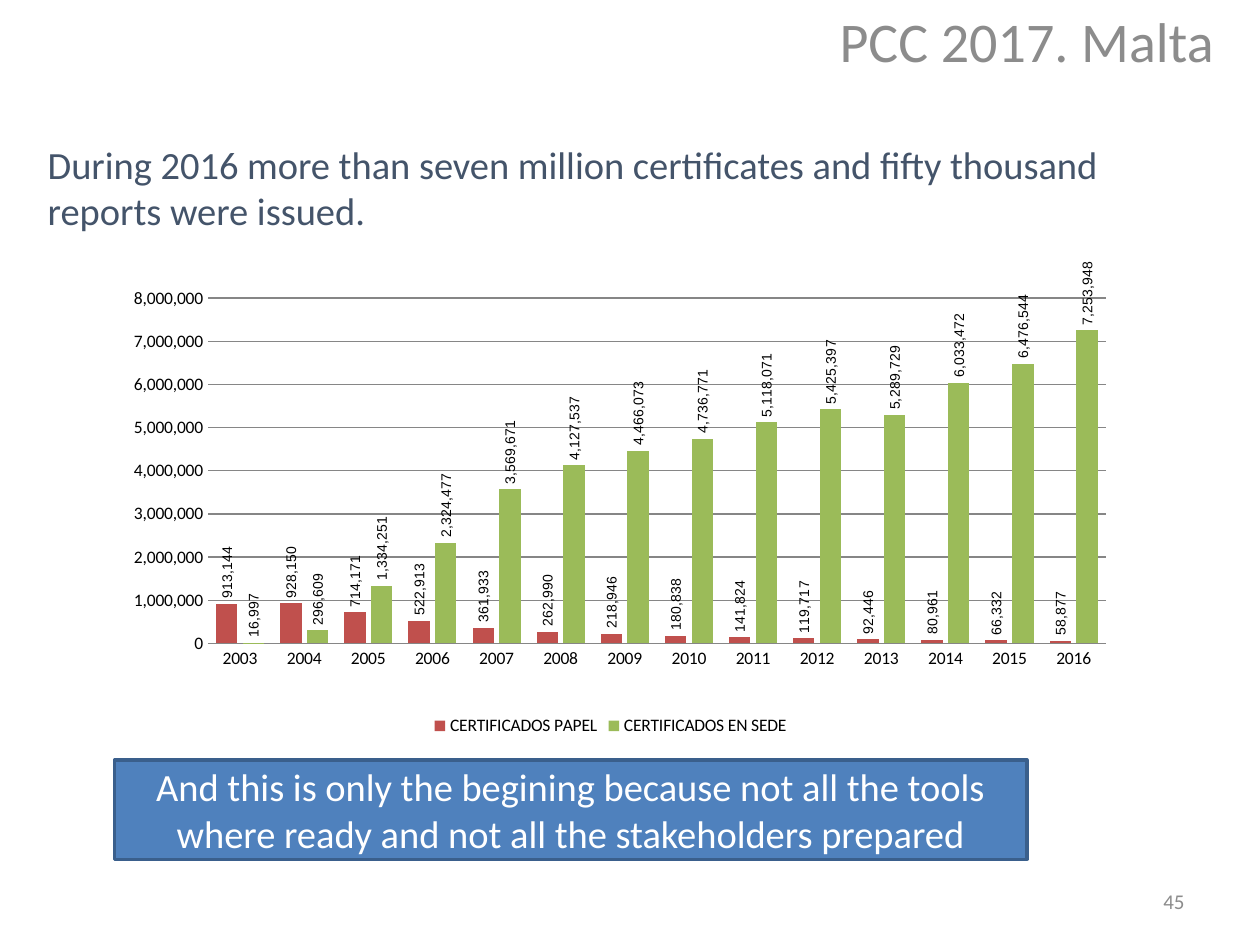
from lxml import etree
from pptx import Presentation
from pptx.chart.data import CategoryChartData
from pptx.dml.color import RGBColor
from pptx.enum.chart import XL_CHART_TYPE as ChartType, XL_LABEL_POSITION as LabelPosition
from pptx.enum.chart import XL_LEGEND_POSITION as LegendPosition, XL_TICK_MARK as TickMark
from pptx.enum.shapes import MSO_SHAPE as Preset
from pptx.enum.text import MSO_ANCHOR as Anchor, PP_ALIGN as Align
from pptx.oxml.ns import qn
from pptx.util import Pt

THEME = {
    "font": "Calibri", "label_font": "Arial",
    "title_size": 32, "body_size": 22, "number_size": 12, "axis_size": 10, "label_size": 8,
    "gray": "8C8C8C", "slate": "44546A", "white": "FFFFFF", "black": "000000",
    "blue": "4F81BD", "border": "3A5F8C", "grid": "868686",
    "red": "C0504D", "green": "9BBB59",
}


def set_font(font, size, color, name="font"):
    values = {"name": THEME[name], "size": Pt(THEME[size]), "bold": False}
    for key, value in values.items():
        setattr(font, key, value)
    font.color.rgb = RGBColor.from_string(THEME[color])


def place_text(shape, box, text, size, color, align, anchor):
    for key, value in zip(("left", "top", "width", "height"), box):
        setattr(shape, key, Pt(value))
    frame = shape.text_frame
    frame.text = text
    frame.word_wrap = True
    frame.vertical_anchor = anchor
    paragraph = frame.paragraphs[0]
    paragraph.alignment = align
    set_font(paragraph.runs[0].font, size, color)


presentation = Presentation()
presentation.slide_width, presentation.slide_height = Pt(720), Pt(540)
slide = presentation.slides.add_slide(presentation.slide_layouts[5])
shapes = slide.shapes

place_text(shapes.title, (377.3, 0, 419, 82.8), "PCC 2017. Malta",
           "title_size", "gray", Align.CENTER, Anchor.TOP)

chart_data = CategoryChartData(number_format="#,##0")
chart_data.categories = [str(year) for year in range(2003, 2017)]
chart_data.add_series("CERTIFICADOS PAPEL", (
    913144, 928150, 714171, 522913, 361933, 262990, 218946,
    180838, 141824, 119717, 92446, 80961, 66332, 58877))
chart_data.add_series("CERTIFICADOS EN SEDE", (
    16997, 296609, 1334251, 2324477, 3569671, 4127537, 4466073,
    4736771, 5118071, 5425397, 5289729, 6033472, 6476544, 7253948))
chart = shapes.add_chart(ChartType.COLUMN_CLUSTERED, Pt(54), Pt(145.4),
                         Pt(589.7), Pt(277.9), chart_data).chart
set_font(chart.font, "axis_size", "black")
chart.has_title = False
chart.has_legend = True
chart.legend.position = LegendPosition.BOTTOM
chart.legend.include_in_layout = False

for axis in (chart.category_axis, chart.value_axis):
    axis.major_tick_mark = axis.minor_tick_mark = TickMark.NONE
chart.category_axis.format.line.color.rgb = RGBColor.from_string(THEME["grid"])
value_axis = chart.value_axis
value_axis.minimum_scale, value_axis.maximum_scale, value_axis.major_unit = 0, 8000000, 1000000
value_axis.format.line.fill.background()
value_axis.tick_labels.number_format = "#,##0"
value_axis.tick_labels.number_format_is_linked = False
grid_line = value_axis.major_gridlines.format.line
grid_line.color.rgb = RGBColor.from_string(THEME["grid"])
grid_line.width = Pt(0.75)

plot = chart.plots[0]
plot.gap_width, plot.overlap, plot.vary_by_categories = 75, -25, False
for series, color in zip(plot.series, ("red", "green")):
    series.format.fill.solid()
    series.format.fill.fore_color.rgb = RGBColor.from_string(THEME[color])
    labels = series.data_labels
    label_format = {"show_value": True, "number_format": "#,##0",
                    "number_format_is_linked": False, "position": LabelPosition.OUTSIDE_END}
    for key, value in label_format.items():
        setattr(labels, key, value)
    set_font(labels.font, "label_size", "black", "label_font")
    body = labels._element.find(qn("c:txPr")).find(qn("a:bodyPr"))
    body.set("rot", "-5400000")
    body.set("vert", "horz")

plot_area = chart._chartSpace.chart.plotArea
for old_layout in plot_area.findall(qn("c:layout")):
    plot_area.remove(old_layout)
layout = etree.Element(qn("c:layout"))
plot_area.insert(0, layout)
manual = etree.SubElement(layout, qn("c:manualLayout"))
for tag, value in (("layoutTarget", "inner"), ("xMode", "edge"), ("yMode", "edge"),
                   ("x", 0.11), ("y", 0.09), ("w", 0.87), ("h", 0.71)):
    etree.SubElement(manual, qn(f"c:{tag}")).set("val", str(value))

place_text(shapes.add_textbox(0, 0, 0, 0), (20.2, 77, 657.4, 82),
           "During 2016 more than seven million certificates and fifty thousand reports were issued.",
           "body_size", "slate", Align.LEFT, Anchor.TOP)

banner = shapes.add_shape(Preset.RECTANGLE, 0, 0, 0, 0)
banner.shadow.inherit = False
banner.fill.solid()
banner.fill.fore_color.rgb = RGBColor.from_string(THEME["blue"])
banner.line.color.rgb = RGBColor.from_string(THEME["border"])
banner.line.width = Pt(2)
place_text(banner, (65.5, 434.2, 521.3, 56.9),
           "And this is only the begining because not all the tools where ready "
           "and not all the stakeholders prepared",
           "body_size", "white", Align.CENTER, Anchor.MIDDLE)

place_text(shapes.add_textbox(0, 0, 0, 0), (516.2, 500.4, 167.8, 28.8), "45",
           "number_size", "gray", Align.RIGHT, Anchor.MIDDLE)

presentation.save("out.pptx")
